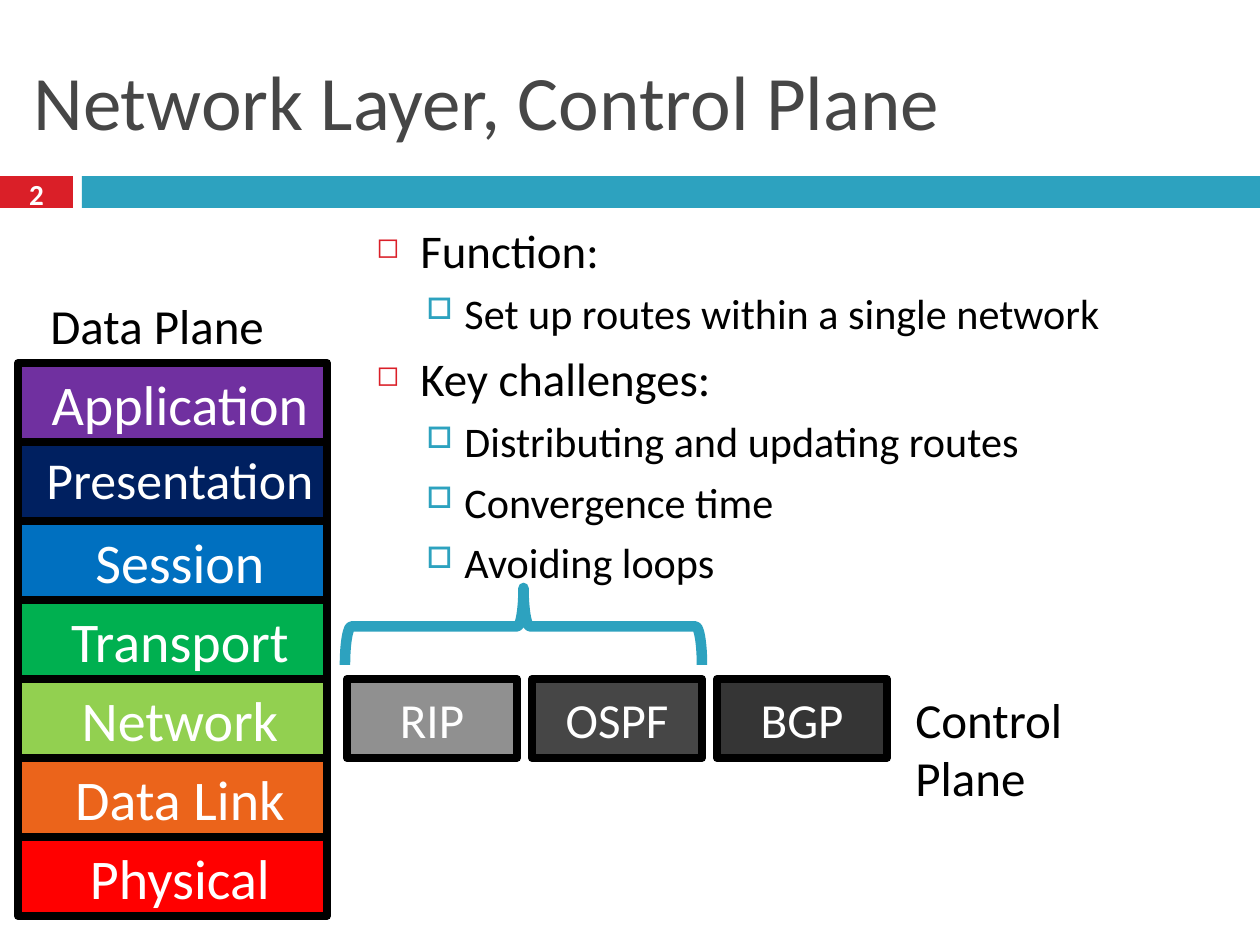
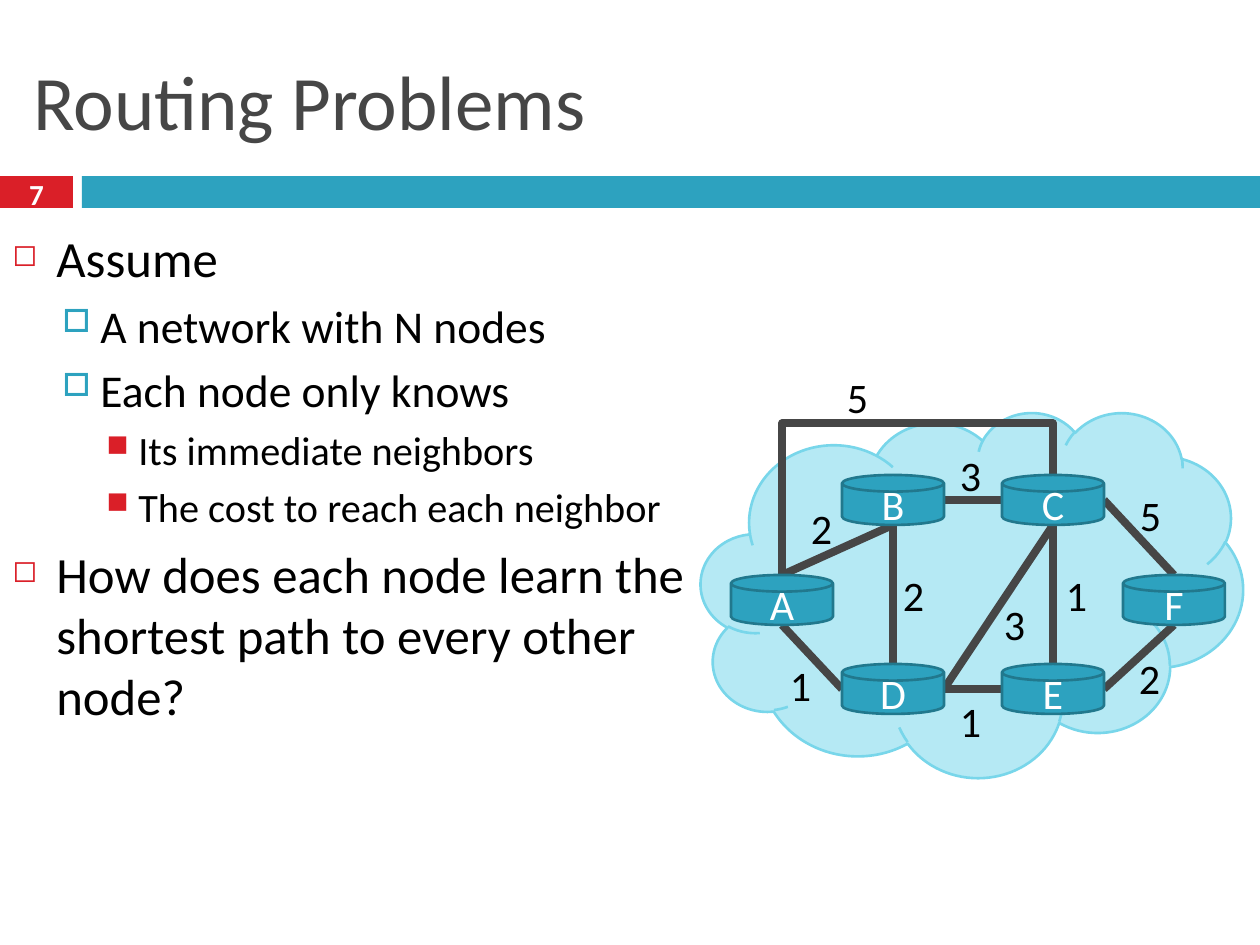
from dataclasses import dataclass

from lxml import etree
from pptx import Presentation
from pptx.dml.color import RGBColor
from pptx.enum.shapes import MSO_CONNECTOR, MSO_SHAPE
from pptx.enum.text import MSO_ANCHOR, PP_ALIGN
from pptx.oxml.ns import qn
from pptx.util import Emu, Pt

RECTANGLE = MSO_SHAPE.RECTANGLE
LEFT_BRACE = MSO_SHAPE.LEFT_BRACE
CLOUD = MSO_SHAPE.CLOUD
DISK = MSO_SHAPE.FLOWCHART_MAGNETIC_DISK
STRAIGHT = MSO_CONNECTOR.STRAIGHT
ELBOW = MSO_CONNECTOR.ELBOW
TOP = MSO_ANCHOR.TOP
MIDDLE = MSO_ANCHOR.MIDDLE
LEFT = PP_ALIGN.LEFT
CENTER = PP_ALIGN.CENTER

EMU_PER_PX = 914400 / 126


@dataclass(frozen=True)
class Theme:
    font: str = "Calibri"
    red: str = "DA1F28"
    teal: str = "2DA2BF"
    teal_dark: str = "21788D"
    cloud: str = "B5E9F4"
    cloud_edge: str = "78D6EA"
    gray: str = "464646"
    black: str = "000000"
    white: str = "FFFFFF"
    title_size: float = 44
    number_size: float = 16.6
    layer_size: float = 32
    long_layer_size: float = 29.6
    label_size: float = 28
    node_size: float = 24
    compact_body_sizes: tuple = (26.8, 24.1)
    body_sizes: tuple = (29, 26, 23)
    thick: float = 4.5
    thin: float = 1.5
    brace_line: float = 6


@dataclass(frozen=True)
class BulletLevel:
    character: str
    color: str
    percent: int
    margin: int
    hanging: int
    space_before: float


THEME = Theme()

BULLET_LEVELS = (
    BulletLevel("◻", THEME.red, 60, 44, 44, 7),
    BulletLevel("□", THEME.teal, 70, 88, 38, 5.5),
    BulletLevel("■", THEME.red, 75, 126, 32, 5),
)

LAYERS = (
    ("Application", "7030A0"),
    ("Presentation", "002060"),
    ("Session", "0070C0"),
    ("Transport", "00B050"),
    ("Network", "92D050"),
    ("Data Link", "EB641B"),
    ("Physical", "FF0000"),
)
PROTOCOLS = (("RIP", "909090"), ("OSPF", "464646"), ("BGP", "353535"))

CONTROL_PLANE_POINTS = (
    (0, "Function:"),
    (1, "Set up routes within a single network"),
    (0, "Key challenges:"),
    (1, "Distributing and updating routes"),
    (1, "Convergence time"),
    (1, "Avoiding loops"),
)
ROUTING_POINTS = (
    (0, "Assume"),
    (1, "A network with N nodes"),
    (1, "Each node only knows"),
    (2, "Its immediate neighbors"),
    (2, "The cost to reach each neighbor"),
    (0, "How does each node learn the shortest path to every other node?"),
)

NODE_WIDTH, NODE_HEIGHT = 102, 50
NODES = {
    "A": (731, 575),
    "B": (842, 475),
    "C": (1002, 475),
    "D": (842, 664),
    "E": (1002, 664),
    "F": (1123, 575),
}
SITES = {"top": (0.5, 0), "bottom": (0.5, 1), "left": (0, 0.5), "right": (1, 0.5)}
LINKS = (
    ("F", "bottom", "E", "right"),
    ("C", "right", "F", "top"),
    ("B", "right", "C", "left"),
    ("E", "left", "D", "right"),
    ("A", "bottom", "D", "left"),
    ("A", "top", "B", "bottom"),
    ("D", "top", "B", "bottom"),
    ("C", "bottom", "D", "right"),
    ("C", "bottom", "E", "top"),
)
COSTS = (
    ("5", 833, 365),
    ("2", 797, 496),
    ("3", 946, 443),
    ("5", 1126, 483),
    ("2", 1125, 646),
    ("1", 946, 689),
    ("1", 776, 653),
    ("2", 889, 563),
    ("3", 990, 592),
    ("1", 1052, 563),
)


def px(value):
    return Emu(round(value * EMU_PER_PX))


def rgb(color):
    return RGBColor.from_string(color)


def format_paragraph(paragraph, size, color, bold=False, align=LEFT):
    paragraph.alignment = align
    for run in paragraph.runs:
        run.font.name = THEME.font
        run.font.size = Pt(size)
        run.font.bold = bold
        run.font.color.rgb = rgb(color)


def add_text(slide, text, box, size, color, bold=False, align=LEFT, anchor=TOP):
    text_frame = slide.shapes.add_textbox(*map(px, box)).text_frame
    text_frame.word_wrap = True
    text_frame.vertical_anchor = anchor
    text_frame.text = text
    format_paragraph(text_frame.paragraphs[0], size, color, bold, align)


def add_block(slide, kind, box, fill=None, line=None, line_width=0):
    shape = slide.shapes.add_shape(kind, *map(px, box))
    shape.shadow.inherit = False
    if fill:
        shape.fill.solid()
        shape.fill.fore_color.rgb = rgb(fill)
    else:
        shape.fill.background()
    if line:
        shape.line.color.rgb = rgb(line)
        shape.line.width = Pt(line_width)
    else:
        shape.line.fill.background()
    return shape


def label_block(shape, text, size, anchor=MIDDLE, margin=0):
    text_frame = shape.text_frame
    text_frame.vertical_anchor = anchor
    text_frame.text = text
    paragraph = text_frame.paragraphs[0]
    format_paragraph(paragraph, size, THEME.white, align=CENTER)
    paragraph._p.get_or_add_pPr().set("marL", str(px(margin)))


def add_bullet(paragraph, level):
    paragraph.space_before = Pt(level.space_before)
    properties = paragraph._p.get_or_add_pPr()
    properties.set("marL", str(px(level.margin)))
    properties.set("indent", str(px(-level.hanging)))
    color = etree.SubElement(properties, qn("a:buClr"))
    etree.SubElement(color, qn("a:srgbClr"), val=level.color)
    etree.SubElement(properties, qn("a:buSzPct"), val=str(level.percent * 1000))
    etree.SubElement(properties, qn("a:buChar"), char=level.character)


def add_body(slide, points, box, sizes):
    text_frame = slide.shapes.add_textbox(*map(px, box)).text_frame
    text_frame.word_wrap = True
    for index, (depth, text) in enumerate(points):
        paragraph = text_frame.add_paragraph() if index else text_frame.paragraphs[0]
        paragraph.text = text
        paragraph.level = depth
        format_paragraph(paragraph, sizes[depth], THEME.black)
        add_bullet(paragraph, BULLET_LEVELS[depth])


def add_link(slide, kind, start, end):
    connector = slide.shapes.add_connector(kind, *map(px, (*start, *end)))
    connector.line.color.rgb = rgb(THEME.gray)
    connector.line.width = Pt(THEME.thick)
    etree.SubElement(connector._element.spPr, qn("a:effectLst"))
    return connector


def add_over_link(slide, start, end, bend):
    center_x, center_y = (start[0] + end[0]) / 2, (start[1] + end[1]) / 2
    half_run, half_rise = (end[0] - start[0]) / 2, (start[1] - end[1]) / 2
    connector = add_link(
        slide,
        ELBOW,
        (center_x + half_rise, center_y + half_run),
        (center_x - half_rise, center_y - half_run),
    )
    properties = connector._element.spPr
    properties.find(qn("a:xfrm")).set("rot", str(90 * 60000))
    adjustments = properties.find(qn("a:prstGeom")).find(qn("a:avLst"))
    etree.SubElement(adjustments, qn("a:gd"), name="adj1", fmla=f"val {bend}")


def node_site(name, side):
    left, top = NODES[name]
    across, down = SITES[side]
    return left + across * NODE_WIDTH, top + down * NODE_HEIGHT


def start_slide(presentation, title, number):
    slide = presentation.slides.add_slide(presentation.slide_layouts[6])
    add_block(slide, RECTANGLE, (0, 176, 73, 32), THEME.red)
    add_block(slide, RECTANGLE, (82, 176, 1178, 32), THEME.teal)
    add_text(slide, title, (21, 32, 1218, 136), THEME.title_size, THEME.gray, anchor=MIDDLE)
    add_text(slide, number, (0, 173, 73, 41), THEME.number_size, THEME.white, True, CENTER, MIDDLE)
    return slide


def build_control_plane(presentation):
    slide = start_slide(presentation, "Network Layer, Control Plane", "2")
    add_body(slide, CONTROL_PLANE_POINTS, (364, 215, 876, 373), THEME.compact_body_sizes)
    for index, (name, color) in enumerate(LAYERS):
        box = (18, 363 + 79 * index, 309, 79)
        layer = add_block(slide, RECTANGLE, box, color, THEME.black, THEME.thick)
        size = THEME.long_layer_size if name == "Presentation" else THEME.layer_size
        label_block(layer, name, size, TOP, 15)
    brace = add_block(slide, LEFT_BRACE, (485, 448, 77, 357), None, THEME.teal, THEME.brace_line)
    brace.rotation = 90
    for index, (name, color) in enumerate(PROTOCOLS):
        box = (347 + 185 * index, 679, 170, 79)
        protocol = add_block(slide, RECTANGLE, box, color, THEME.black, THEME.thick)
        label_block(protocol, name, THEME.label_size)
    add_text(slide, "Control Plane", (903, 683, 220, 130), THEME.label_size, THEME.black)
    add_text(slide, "Data Plane", (38, 289, 271, 72), THEME.label_size, THEME.black)


def build_routing_problems(presentation):
    slide = start_slide(presentation, "Routing Problems", "7")
    add_body(slide, ROUTING_POINTS, (0, 221, 731, 703), THEME.body_sizes)
    add_block(slide, CLOUD, (701, 412, 542, 365), THEME.cloud, THEME.cloud_edge, THEME.thin)
    for start, start_side, end, end_side in LINKS:
        add_link(slide, STRAIGHT, node_site(start, start_side), node_site(end, end_side))
    add_over_link(slide, node_site("A", "top"), node_site("C", "top"), 151500)
    for name, position in NODES.items():
        box = (*position, NODE_WIDTH, NODE_HEIGHT)
        node = add_block(slide, DISK, box, THEME.teal, THEME.teal_dark, THEME.thin)
        label_block(node, name, THEME.node_size)
    for cost, left, top in COSTS:
        add_text(slide, cost, (left, top, 49, 63), THEME.node_size, THEME.black, align=CENTER)


def main():
    presentation = Presentation()
    presentation.slide_width = px(1260)
    presentation.slide_height = px(945)
    build_control_plane(presentation)
    build_routing_problems(presentation)
    presentation.save("out.pptx")


if __name__ == "__main__":
    main()
